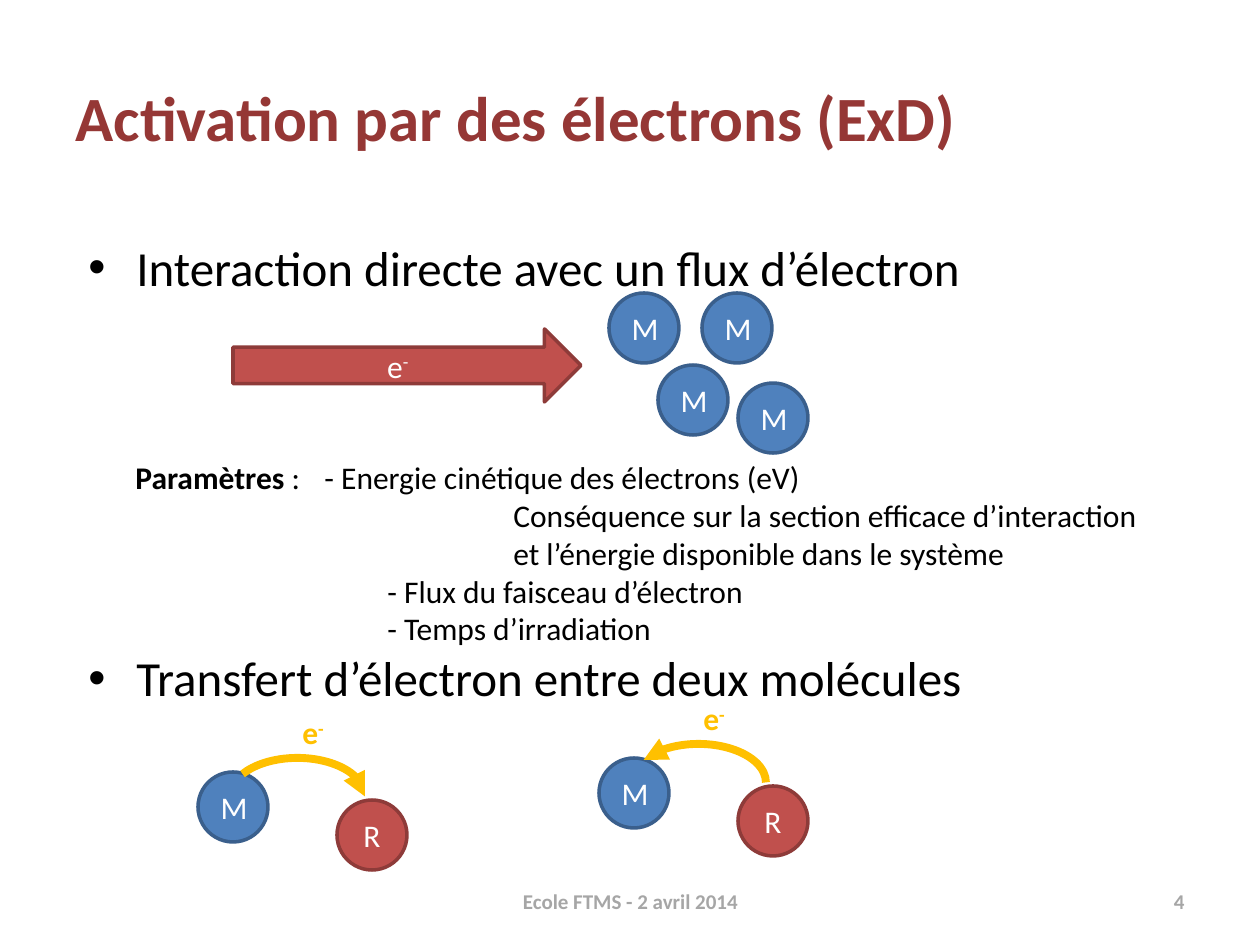
from lxml import etree
from pptx import Presentation
from pptx.dml.color import RGBColor
from pptx.enum.shapes import MSO_SHAPE
from pptx.enum.text import MSO_ANCHOR, PP_ALIGN
from pptx.oxml.ns import qn
from pptx.util import Pt

PX = 914400 // 126
INCH = 126
FONT = "Calibri"
TITLE_RED = RGBColor(0x95, 0x37, 0x35)
BLUE = RGBColor(0x4F, 0x81, 0xBD)
BLUE_EDGE = RGBColor(0x3A, 0x5F, 0x8C)
RED = RGBColor(0xC0, 0x50, 0x4D)
RED_EDGE = RGBColor(0x8E, 0x3B, 0x39)
GOLD = RGBColor(0xFF, 0xC0, 0x00)
GRAY = RGBColor(0xA6, 0xA6, 0xA6)
BLACK = RGBColor(0, 0, 0)
WHITE = RGBColor(0xFF, 0xFF, 0xFF)

LEFT, CENTER, RIGHT = PP_ALIGN.LEFT, PP_ALIGN.CENTER, PP_ALIGN.RIGHT
TOP, MIDDLE = MSO_ANCHOR.TOP, MSO_ANCHOR.MIDDLE
OVAL, ARROW, ARC = MSO_SHAPE.OVAL, MSO_SHAPE.RIGHT_ARROW, MSO_SHAPE.ARC

DIAM = 70
TARGETS = [(658, 365), (609, 293), (702, 293), (738, 383)]
DETAILS = [
    (3, "Conséquence sur la section efficace d’interaction"),
    (3, "et l’énergie disponible dans le système"),
    (2, "- Flux du faisceau d’électron"),
    (2, "- Temps d’irradiation"),
]


def emu(*lengths):
    return [n * PX for n in lengths]


def style(para, size, color, bold=False, align=LEFT):
    para.alignment = align
    font = para.font
    font.name, font.size, font.bold = FONT, Pt(size), bold
    font.color.rgb = color


def add_charge(para):
    """Write e with a raised minus sign."""
    para.add_run().text = "e"
    sign = para.add_run()
    sign.text = "-"
    sign._r.get_or_add_rPr().set("baseline", "30000")


def add_box(slide, box, anchor=TOP, wrap=True):
    frame = slide.shapes.add_textbox(*emu(*box)).text_frame
    frame.word_wrap = wrap
    frame.vertical_anchor = anchor
    return frame


def add_note(slide, box, text, align):
    para = add_box(slide, box, MIDDLE).paragraphs[0]
    para.text = text
    style(para, 12, GRAY, True, align)


def add_solid(slide, kind, box, fill, edge):
    """Add a filled shape and return its centred paragraph."""
    shape = slide.shapes.add_shape(kind, *emu(*box))
    shape.shadow.inherit = False
    shape.fill.solid()
    shape.fill.fore_color.rgb = fill
    shape.line.color.rgb = edge
    shape.line.width = Pt(2)
    shape.text_frame.vertical_anchor = MIDDLE
    para = shape.text_frame.paragraphs[0]
    style(para, 18, WHITE, align=CENTER)
    return para


def add_ball(slide, left, top, letter):
    fill, edge = (BLUE, BLUE_EDGE) if letter == "M" else (RED, RED_EDGE)
    add_solid(slide, OVAL, (left, top, DIAM, DIAM), fill, edge).text = letter


def add_arc(slide, left, top, end):
    arc = slide.shapes.add_shape(ARC, *emu(left, top, 135, 77))
    arc.shadow.inherit = False
    arc.adjustments[0], arc.adjustments[1] = 121.35, 0
    arc.fill.background()
    arc.line.color.rgb = GOLD
    arc.line.width = Pt(4.5)
    line = arc._element.spPr.find(qn("a:ln"))
    etree.SubElement(line, qn(end), type="triangle")


def add_transfer(slide, left, top, end):
    """Add molecule M, reagent R and the electron that moves between them."""
    add_ball(slide, left, top, "M")
    add_ball(slide, left + 139, top + 28, "R")
    add_arc(slide, left + 32, top - 14, end)
    para = add_box(slide, (left + 92, top - 65, 48, 50), wrap=False).paragraphs[0]
    add_charge(para)
    style(para, 18, GOLD, True)


def add_title(slide, text):
    title = slide.shapes.title
    title.left, title.top, title.width, title.height = emu(63, 38, 1134, 157)
    title.text_frame.vertical_anchor = MIDDLE
    para = title.text_frame.paragraphs[0]
    para.text = text
    style(para, 36, TITLE_RED, True)


def add_bullet(para, text, before):
    para.text = text
    style(para, 28, BLACK)
    para.space_before = Pt(before)
    props = para._p.get_or_add_pPr()
    props.set("marL", str(48 * PX))
    props.set("indent", str(-48 * PX))
    etree.SubElement(props, qn("a:buFont"), typeface="Arial")
    etree.SubElement(props, qn("a:buChar"), char="•")
    # Bullet marks come before the default run properties.
    props.append(props.find(qn("a:defRPr")))


def add_params(slide):
    frame = add_box(slide, (123, 452, 1066, 204))
    para = frame.paragraphs[0]
    head = para.add_run()
    head.text = "Paramètres"
    head.font.bold = True
    para.add_run().text = " :\t- Energie cinétique des électrons (eV)"
    style(para, 18, BLACK)
    for depth, text in DETAILS:
        para = frame.add_paragraph()
        para.text = text
        style(para, 18, BLACK)
        para._p.get_or_add_pPr().set("marL", str(depth * INCH * PX))


def main():
    deck = Presentation()
    deck.slide_width, deck.slide_height = emu(1260, 945)
    slide = deck.slides.add_slide(deck.slide_layouts[5])
    add_title(slide, "Activation par des électrons (ExD)")

    body = add_box(slide, (76, 231, 1134, 624))
    add_bullet(body.paragraphs[0], "Interaction directe avec un flux d’électron", 0)
    add_bullet(body.add_paragraph(), "Transfert d’électron entre deux molécules", 201)
    add_note(slide, (903, 876, 294, 50), "4", RIGHT)

    for left, top in TARGETS:
        add_ball(slide, left, top, "M")
    add_charge(add_solid(slide, ARROW, (233, 329, 348, 73), RED, RED_EDGE))
    add_params(slide)

    add_transfer(slide, 198, 772, "a:tailEnd")
    add_transfer(slide, 599, 758, "a:headEnd")
    add_note(slide, (431, 876, 399, 50), "Ecole FTMS - 2 avril 2014", CENTER)
    deck.save("out.pptx")


if __name__ == "__main__":
    main()
